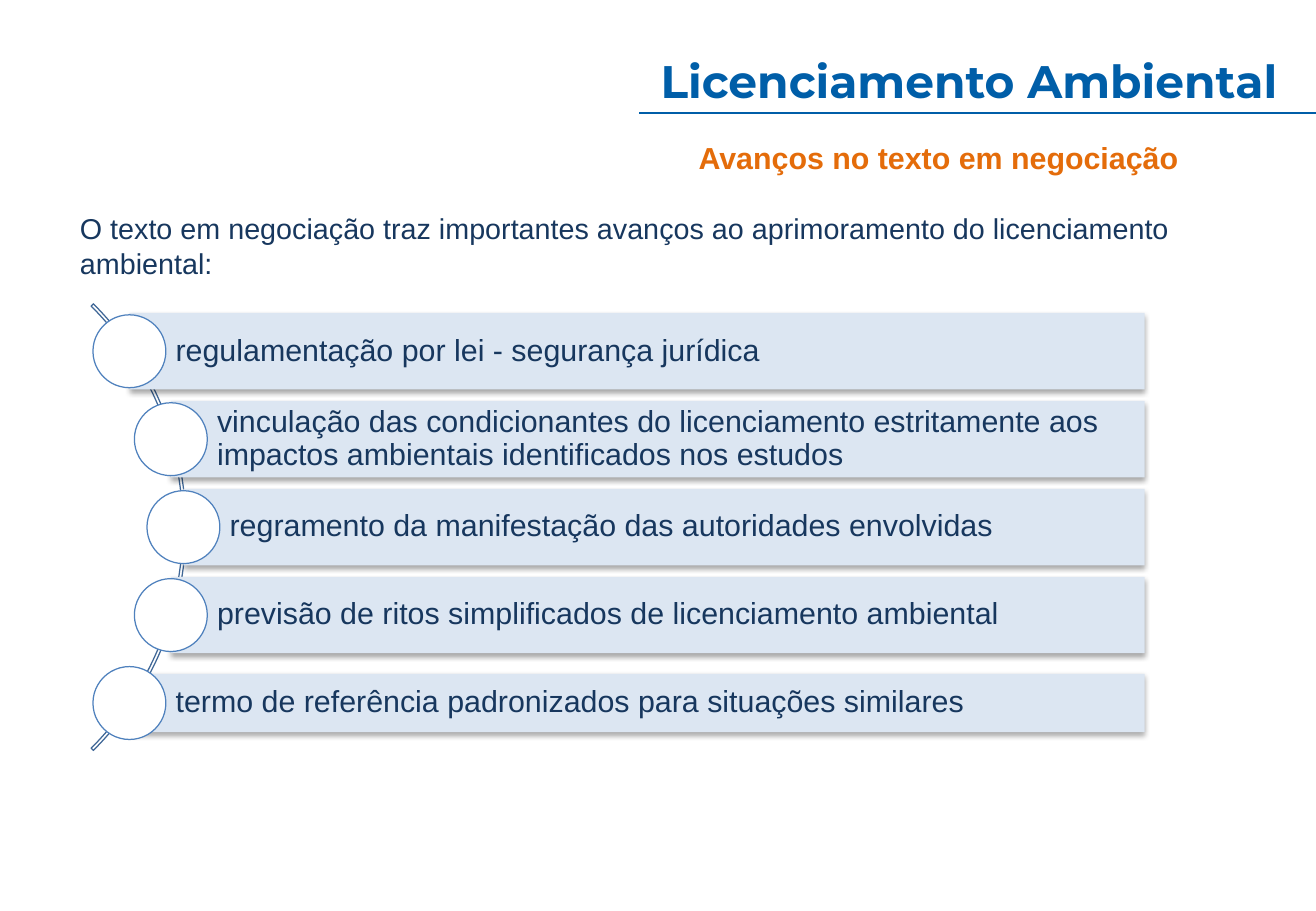
from dataclasses import dataclass
from math import sqrt

from lxml import etree
from pptx import Presentation
from pptx import util as u
from pptx.dml.color import RGBColor
from pptx.enum import shapes, text
from pptx.oxml.ns import qn

# Square grid: 108.3 columns by 75 rows
CELL = u.Inches(0.1)
COLS, ROWS = 108.3, 75

BLUE = RGBColor(0x00, 0x5E, 0xA8)
NAVY = RGBColor(0x17, 0x37, 0x5E)
ORANGE = RGBColor(0xE4, 0x6C, 0x0A)
PALE = RGBColor(0xDC, 0xE6, 0xF2)
RING = RGBColor(0x4F, 0x81, 0xBD)
CURVE = RGBColor(0x3F, 0x67, 0x97)
WHITE = RGBColor(0xFF, 0xFF, 0xFF)

# Arc and the items spaced along it
MID_X, MID_Y = -10.7, 43.4
ARC, TRACK = 26, 25.8
STEP, DOT, RIGHT = 7.24, 6, 94.2


@dataclass
class Item:
    label: str
    height: float = 6.3


ITEMS = [
    Item("regulamentação por lei - segurança jurídica"),
    Item("vinculação das condicionantes do licenciamento estritamente aos "
         "impactos ambientais identificados nos estudos"),
    Item("regramento da manifestação das autoridades envolvidas"),
    Item("previsão de ritos simplificados de licenciamento ambiental"),
    Item("termo de referência padronizados para situações similares", 4.8),
]


def grid(*cells: float) -> list[int]:
    return [round(c * CELL) for c in cells]


def write(shape, words: str, size: float, color: RGBColor,
          font: str = "Arial", bold: bool = False):
    frame = shape.text_frame
    frame.text = words
    run = frame.paragraphs[0].runs[0].font
    run.name, run.size, run.bold = font, u.Pt(size), bold
    run.color.rgb = color
    return frame


def outline(shape, color: RGBColor) -> None:
    shape.line.color.rgb = color
    shape.line.width = u.Pt(0.75)


def add(slide, kind, *cells: float):
    shape = slide.shapes.add_shape(kind, *grid(*cells))
    shape.shadow.inherit = False
    return shape


def shade(shape) -> None:
    effects = shape._element.spPr.find(qn("a:effectLst"))
    drop = etree.SubElement(effects, qn("a:outerShdw"), blurRad="40000",
                            dist="23000", dir="5400000", rotWithShape="0")
    black = etree.SubElement(drop, qn("a:srgbClr"), val="000000")
    etree.SubElement(black, qn("a:alpha"), val="35000")


def draw_item(slide, item: Item, place: int) -> None:
    rise = (place - (len(ITEMS) - 1) / 2) * STEP
    x, y = MID_X + sqrt(TRACK ** 2 - rise ** 2), MID_Y + rise

    # Bar
    bar = add(slide, shapes.MSO_SHAPE.RECTANGLE,
              x, y - item.height / 2, RIGHT - x, item.height)
    bar.fill.solid()
    bar.fill.fore_color.rgb = PALE
    bar.line.fill.background()
    shade(bar)
    frame = write(bar, item.label, 18, NAVY)
    frame.word_wrap = True
    frame.vertical_anchor = text.MSO_ANCHOR.MIDDLE
    (frame.margin_left, frame.margin_top,
     frame.margin_right, frame.margin_bottom) = grid(3.8, 0.5, 0.5, 0.5)
    para = frame.paragraphs[0]
    para.alignment = text.PP_ALIGN.LEFT
    para.line_spacing = 0.9

    # Circle
    dot = add(slide, shapes.MSO_SHAPE.OVAL, x - DOT / 2, y - DOT / 2, DOT, DOT)
    dot.fill.solid()
    dot.fill.fore_color.rgb = WHITE
    outline(dot, RING)


def main() -> None:
    deck = Presentation()
    deck.slide_width, deck.slide_height = grid(COLS, ROWS)
    slide = deck.slides.add_slide(deck.slide_layouts[5])

    # Title and its rule
    title = slide.shapes.title
    title.left, title.top, title.width, title.height = grid(50.2, 4.4, 55.9, 6.6)
    frame = write(title, "Licenciamento Ambiental", 27, BLUE, "Montserrat", True)
    frame.vertical_anchor = text.MSO_ANCHOR.TOP
    frame.auto_size = text.MSO_AUTO_SIZE.SHAPE_TO_FIT_TEXT
    frame.paragraphs[0].alignment = text.PP_ALIGN.RIGHT
    frame.paragraphs[0].line_spacing = 0.9
    rule = slide.shapes.add_connector(shapes.MSO_CONNECTOR.STRAIGHT,
                                      *grid(52.6, 9.3, COLS, 9.3))
    outline(rule, BLUE)
    etree.SubElement(rule._element.spPr, qn("a:effectLst"))

    # Subtitle and opening sentence
    sub = slide.shapes.add_textbox(*grid(56.5, 11, 41.9, 4))
    write(sub, "Avanços no texto em negociação", 18, ORANGE, bold=True)
    intro = slide.shapes.add_textbox(*grid(5.6, 16.9, 100, 6.8))
    write(intro, "O texto em negociação traz importantes avanços ao "
          "aprimoramento do licenciamento ambiental:", 17, NAVY).word_wrap = True

    # Arc with the items
    arc = add(slide, shapes.MSO_SHAPE.BLOCK_ARC,
              MID_X - ARC, MID_Y - ARC, 2 * ARC, 2 * ARC)
    for i, value in enumerate((189, 27, 0.005)):
        arc.adjustments[i] = value
    arc.fill.background()
    outline(arc, CURVE)
    for place, item in enumerate(ITEMS):
        draw_item(slide, item, place)

    deck.save("out.pptx")


if __name__ == "__main__":
    main()
